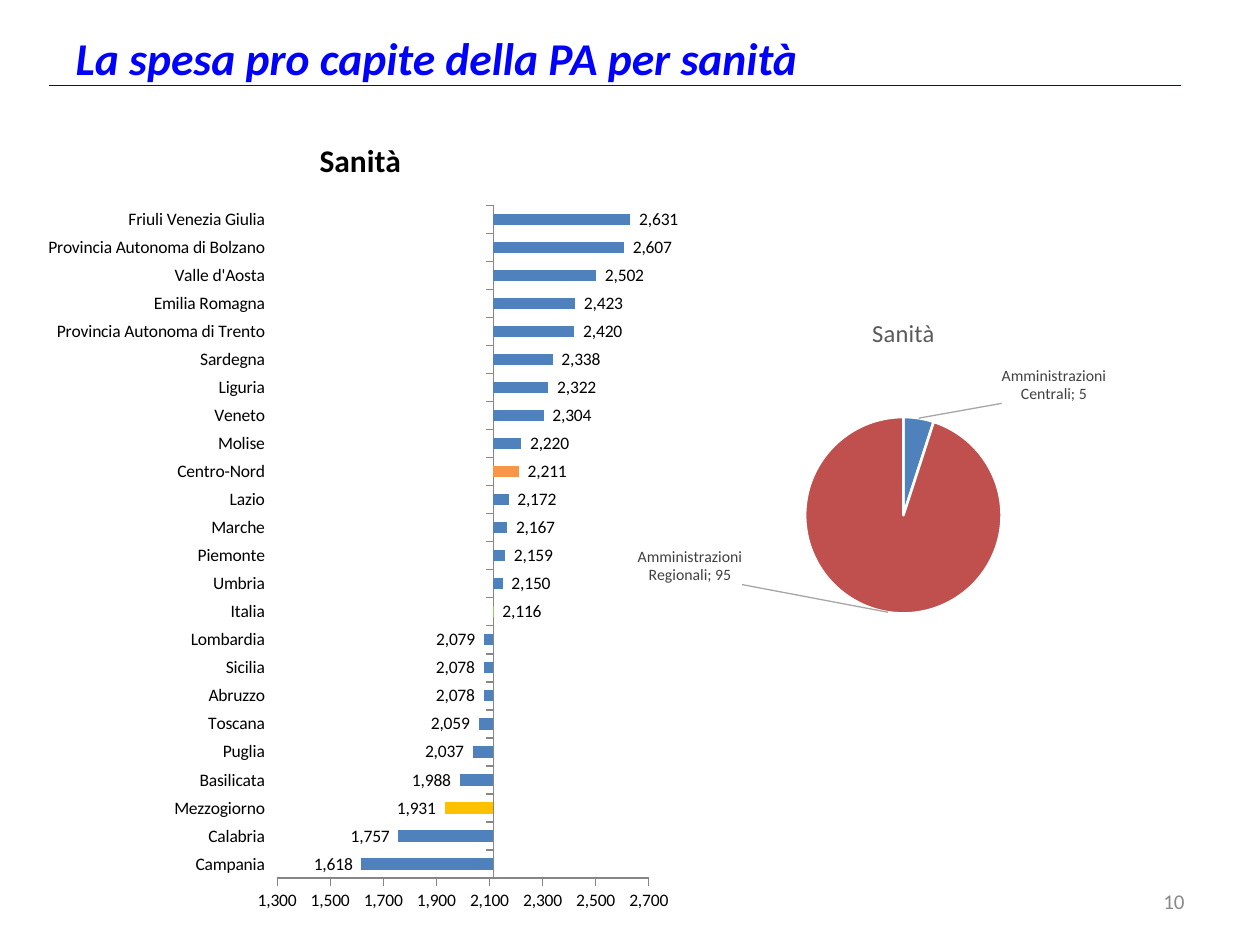
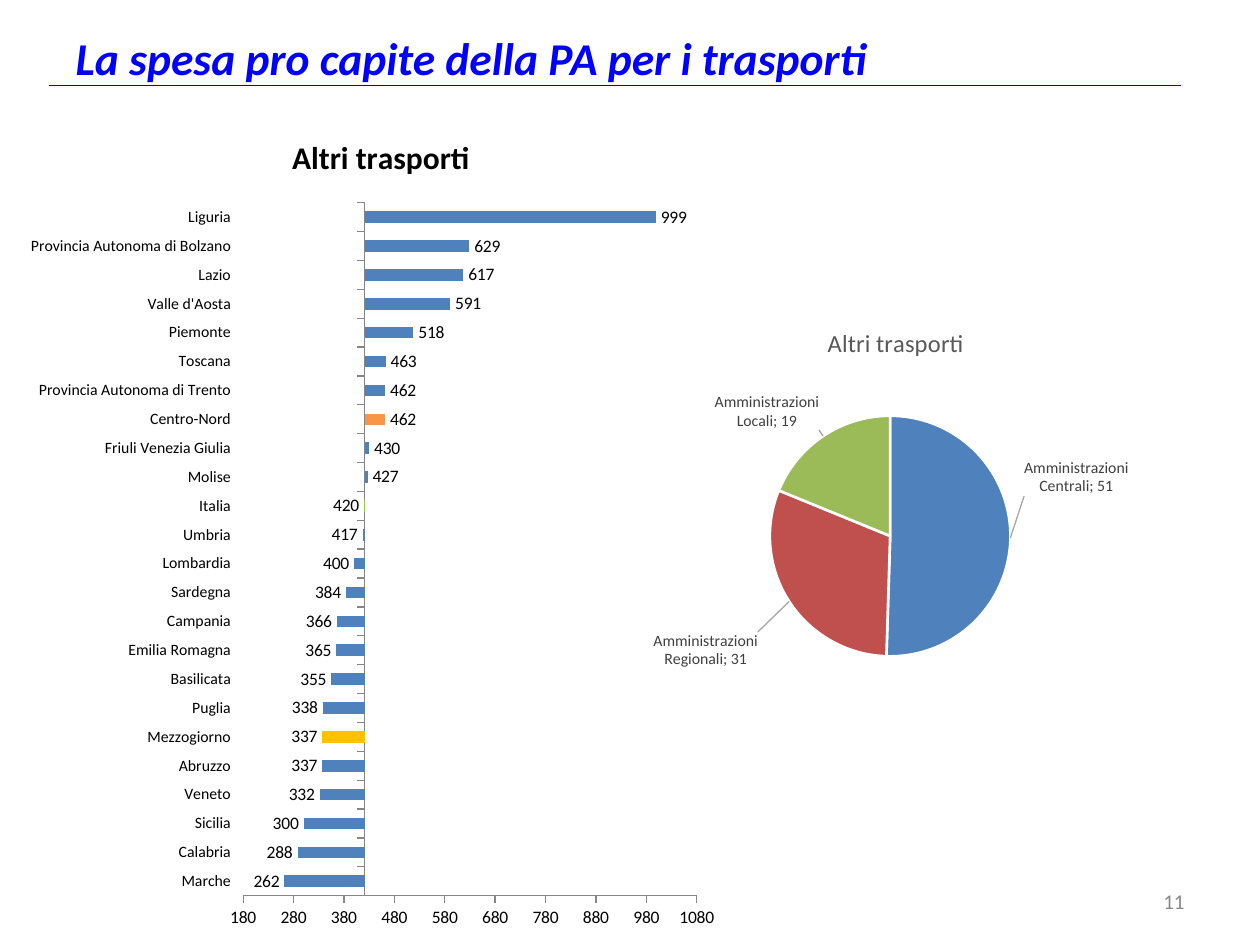
from dataclasses import dataclass
from typing import Optional

from pptx import Presentation
from pptx.chart.data import CategoryChartData
from pptx.dml.color import RGBColor
from pptx.enum.chart import XL_CHART_TYPE as ChartType
from pptx.enum.chart import XL_LABEL_POSITION as LabelPos
from pptx.enum.chart import XL_TICK_LABEL_POSITION as TickLabelPos
from pptx.enum.chart import XL_TICK_MARK as TickMark
from pptx.enum.shapes import MSO_CONNECTOR as Connector
from pptx.enum.text import MSO_ANCHOR as Anchor
from pptx.enum.text import PP_ALIGN as Align
from pptx.oxml import parse_xml
from pptx.oxml.ns import nsdecls, qn
from pptx.util import Inches, Pt

# Shared style
FONT = "Calibri"
TITLE_BLUE = RGBColor(0x00, 0x00, 0xFF)
RULE_BLUE = RGBColor(0x00, 0x00, 0xCC)
BLACK = RGBColor(0x00, 0x00, 0x00)
WHITE = RGBColor(0xFF, 0xFF, 0xFF)
PAGE_GREY = RGBColor(0x89, 0x89, 0x89)
AXIS_GREY = RGBColor(0x86, 0x86, 0x86)
PIE_TITLE_GREY = RGBColor(0x59, 0x59, 0x59)
PIE_LABEL_GREY = RGBColor(0x40, 0x40, 0x40)
BLUE = RGBColor(0x4F, 0x81, 0xBD)
RED = RGBColor(0xC0, 0x50, 0x4D)
GREEN = RGBColor(0x9B, 0xBB, 0x59)

AREA_COLORS = {
    "Mezzogiorno": RGBColor(0xFF, 0xC0, 0x00),
    "Italia": RGBColor(0x92, 0xD0, 0x50),
    "Centro-Nord": RGBColor(0xF7, 0x96, 0x46),
}
ADMINISTRATIONS = {
    "Amministrazioni Centrali": BLUE,
    "Amministrazioni Regionali": RED,
    "Amministrazioni Locali": GREEN,
}
THOUSANDS = '_-* #,##0_-;\\-* #,##0_-;_-* "-"??_-;_-@_'


@dataclass(frozen=True)
class Box:
    """Left, top, width and height in inches."""
    left: float
    top: float
    width: float
    height: float

    def lengths(self) -> list:
        return [Inches(v) for v in (self.left, self.top, self.width, self.height)]


@dataclass(frozen=True)
class RegionBars:
    title: str
    frame: Box
    plot: Box
    spending: dict[str, int]
    italy_level: int
    low: int
    high: int
    step: int
    number_format: str
    region_size: int


@dataclass(frozen=True)
class SharePie:
    title: str
    frame: Box
    plot: Box
    shares: tuple[int, ...]
    label_shifts: tuple[Optional[tuple[float, float]], ...]  # None hides a label


@dataclass(frozen=True)
class SpendingSlide:
    title: str
    page: int
    bars: RegionBars
    pie: SharePie


SLIDES = [
    SpendingSlide(
        "La spesa pro capite della PA per sanità", 10,
        RegionBars(
            "Sanità", Box(0.28, 0.87, 5.16, 6.48), Box(2.2, 1.63, 2.95, 5.34),
            {"Campania": 1618, "Calabria": 1757, "Mezzogiorno": 1931,
             "Basilicata": 1988, "Puglia": 2037, "Toscana": 2059,
             "Abruzzo": 2078, "Sicilia": 2078, "Lombardia": 2079,
             "Italia": 2116, "Umbria": 2150, "Piemonte": 2159,
             "Marche": 2167, "Lazio": 2172, "Centro-Nord": 2211,
             "Molise": 2220, "Veneto": 2304, "Liguria": 2322,
             "Sardegna": 2338, "Provincia Autonoma di Trento": 2420,
             "Emilia Romagna": 2423, "Valle d'Aosta": 2502,
             "Provincia Autonoma di Bolzano": 2607,
             "Friuli Venezia Giulia": 2631},
            2115, 1300, 2700, 200, THOUSANDS, 10),
        SharePie("Sanità", Box(4.67, 2.36, 5, 3), Box(6.39, 3.31, 1.56, 1.56),
                 (5, 95, 0), ((0.13, -0.02), (-0.23, -0.19), None)),
    ),
    SpendingSlide(
        "La spesa pro capite della PA per i trasporti", 11,
        RegionBars(
            " Altri trasporti", Box(0.2, 0.84, 5.59, 6.67),
            Box(1.93, 1.61, 3.6, 5.5),
            {"Marche": 262, "Calabria": 288, "Sicilia": 300, "Veneto": 332,
             "Abruzzo": 337, "Mezzogiorno": 337, "Puglia": 338,
             "Basilicata": 355, "Emilia Romagna": 365, "Campania": 366,
             "Sardegna": 384, "Lombardia": 400, "Umbria": 417,
             "Italia": 420, "Molise": 427, "Friuli Venezia Giulia": 430,
             "Centro-Nord": 462, "Provincia Autonoma di Trento": 462,
             "Toscana": 463, "Piemonte": 518, "Valle d'Aosta": 591,
             "Lazio": 617, "Provincia Autonoma di Bolzano": 629,
             "Liguria": 999},
            421, 180, 1080, 100, "0", 9),
        SharePie("Altri trasporti", Box(4.61, 2.44, 5, 3),
                 Box(6.11, 3.3, 1.91, 1.91),
                 (51, 31, 19), ((0.01, -0.16), (-0.04, 0.07), (0, 0))),
    ),
]


def style_font(font, size: float, color: RGBColor, bold: bool = False,
               italic: bool = False) -> None:
    font.name, font.size = FONT, Pt(size)
    font.bold, font.italic = bold, italic
    font.color.rgb = color


def fill_solid(fmt, color: RGBColor) -> None:
    fmt.fill.solid()
    fmt.fill.fore_color.rgb = color


def add_heading(slide, text: str) -> None:
    heading = slide.shapes.title
    heading.left, heading.top, heading.width, heading.height = Box(0.5, 0, 9, 0.91).lengths()
    frame = heading.text_frame
    frame.text = text
    frame.vertical_anchor = Anchor.MIDDLE
    frame.paragraphs[0].alignment = Align.LEFT
    style_font(frame.paragraphs[0].runs[0].font, 26, TITLE_BLUE, bold=True, italic=True)


def add_rule(slide) -> None:
    rule = slide.shapes.add_connector(
        Connector.STRAIGHT, Inches(0.39), Inches(0.68), Inches(9.37), Inches(0.68))
    rule.line.color.rgb = RULE_BLUE
    rule.line.width = Pt(0.75)
    rule._element.spPr.append(parse_xml(
        f'<a:effectLst {nsdecls("a")}><a:outerShdw blurRad="50800" dist="38100" dir="2700000">'
        '<a:srgbClr val="000000"><a:alpha val="40000"/></a:srgbClr>'
        '</a:outerShdw></a:effectLst>'))


def add_page_number(slide, page: int) -> None:
    frame = slide.shapes.add_textbox(*Box(7.17, 6.95, 2.33, 0.4).lengths()).text_frame
    frame.word_wrap = True
    frame.vertical_anchor = Anchor.MIDDLE
    frame.text = str(page)
    frame.paragraphs[0].alignment = Align.RIGHT
    style_font(frame.paragraphs[0].runs[0].font, 12, PAGE_GREY)


def place_plot(chart, frame: Box, plot: Box) -> None:
    """Fix the inner plot area, given in slide inches."""
    area = chart._chartSpace.chart.plotArea
    for old in area.findall(qn("c:layout")):
        area.remove(old)
    parts = {"x": (plot.left - frame.left) / frame.width,
             "y": (plot.top - frame.top) / frame.height,
             "w": plot.width / frame.width,
             "h": plot.height / frame.height}
    sizes = "".join(f'<c:{key} val="{value:.4f}"/>' for key, value in parts.items())
    area.insert(0, parse_xml(
        f'<c:layout {nsdecls("c")}><c:manualLayout><c:layoutTarget val="inner"/>'
        f'<c:xMode val="edge"/><c:yMode val="edge"/>{sizes}</c:manualLayout></c:layout>'))


def add_titled_chart(slide, kind, content, categories, values, title_size: int,
                     title_color: RGBColor, title_bold: bool):
    data = CategoryChartData()
    data.categories = list(categories)
    data.add_series(content.title.strip(), list(values))
    chart = slide.shapes.add_chart(kind, *content.frame.lengths(), data).chart
    style_font(chart.font, 10, BLACK)
    chart.has_legend = False
    chart.has_title = True
    heading = chart.chart_title.text_frame
    heading.text = content.title
    style_font(heading.paragraphs[0].runs[0].font, title_size, title_color, title_bold)
    chart.chart_title.include_in_layout = False
    place_plot(chart, content.frame, content.plot)
    return chart


def add_region_bars(slide, bars: RegionBars) -> None:
    chart = add_titled_chart(slide, ChartType.BAR_CLUSTERED, bars, bars.spending,
                             bars.spending.values(), 18, BLACK, True)
    plot = chart.plots[0]
    plot.gap_width = 150
    plot.vary_by_categories = False

    # Bars, with the aggregate areas highlighted
    series = plot.series[0]
    fill_solid(series.format, BLUE)
    for index, region in enumerate(bars.spending):
        if region in AREA_COLORS:
            fill_solid(series.points[index].format, AREA_COLORS[region])
    labels = series.data_labels
    labels.show_value = True
    labels.position = LabelPos.OUTSIDE_END
    labels.number_format, labels.number_format_is_linked = bars.number_format, False
    style_font(labels.font, 10, BLACK)

    # Axes, meeting at the national level
    regions, amounts = chart.category_axis, chart.value_axis
    for axis, size in ((regions, bars.region_size), (amounts, 10)):
        axis.has_major_gridlines = False
        axis.major_tick_mark = TickMark.OUTSIDE
        axis.minor_tick_mark = TickMark.NONE
        axis.format.line.color.rgb = AXIS_GREY
        axis.format.line.width = Pt(0.75)
        style_font(axis.tick_labels.font, size, BLACK)
    regions.tick_label_position = TickLabelPos.LOW
    amounts.minimum_scale, amounts.maximum_scale = bars.low, bars.high
    amounts.major_unit = bars.step
    amounts.crosses_at = bars.italy_level
    amounts.tick_labels.number_format = bars.number_format
    amounts.tick_labels.number_format_is_linked = False


def point_label(index: int, shift: Optional[tuple[float, float]]):
    if shift is None:
        body = '<c:delete val="1"/>'
    else:
        shows = {"LegendKey": 0, "Val": 1, "CatName": 1, "SerName": 0,
                 "Percent": 0, "BubbleSize": 0}
        flags = "".join(f'<c:show{key} val="{on}"/>' for key, on in shows.items())
        body = (f'<c:layout><c:manualLayout><c:x val="{shift[0]}"/><c:y val="{shift[1]}"/>'
                f'</c:manualLayout></c:layout><c:dLblPos val="outEnd"/>{flags}'
                '<c:separator>; </c:separator>')
    return parse_xml(f'<c:dLbl {nsdecls("c")}><c:idx val="{index}"/>{body}</c:dLbl>')


def add_share_pie(slide, pie: SharePie) -> None:
    chart = add_titled_chart(slide, ChartType.PIE, pie, ADMINISTRATIONS, pie.shares,
                             14, PIE_TITLE_GREY, False)
    series = chart.plots[0].series[0]
    for index, color in enumerate(ADMINISTRATIONS.values()):
        wedge = series.points[index].format
        fill_solid(wedge, color)
        wedge.line.color.rgb = WHITE
        wedge.line.width = Pt(1.5)

    # Labels with leader lines
    labels = series.data_labels
    labels.show_value = labels.show_category_name = True
    labels.show_percentage = False
    labels.position = LabelPos.OUTSIDE_END
    labels.number_format, labels.number_format_is_linked = "0", False
    style_font(labels.font, 9, PIE_LABEL_GREY)
    group = labels._element
    for index, shift in enumerate(pie.label_shifts):
        group.insert(index, point_label(index, shift))
    for old in group.findall(qn("c:showLeaderLines")):
        group.remove(old)
    for extra in ('<c:separator {}>; </c:separator>',
                  '<c:showLeaderLines {} val="1"/>',
                  '<c:leaderLines {}><c:spPr><a:ln w="9525"><a:solidFill>'
                  '<a:srgbClr val="A6A6A6"/></a:solidFill></a:ln></c:spPr></c:leaderLines>'):
        group.append(parse_xml(extra.format(nsdecls("c", "a"))))


def main() -> None:
    deck = Presentation()
    deck.slide_width, deck.slide_height = Inches(10), Inches(7.5)
    title_only = deck.slide_layouts[5]
    for content in SLIDES:
        slide = deck.slides.add_slide(title_only)
        add_heading(slide, content.title)
        add_page_number(slide, content.page)
        add_rule(slide)
        add_region_bars(slide, content.bars)
        add_share_pie(slide, content.pie)
    deck.save("out.pptx")


if __name__ == "__main__":
    main()
